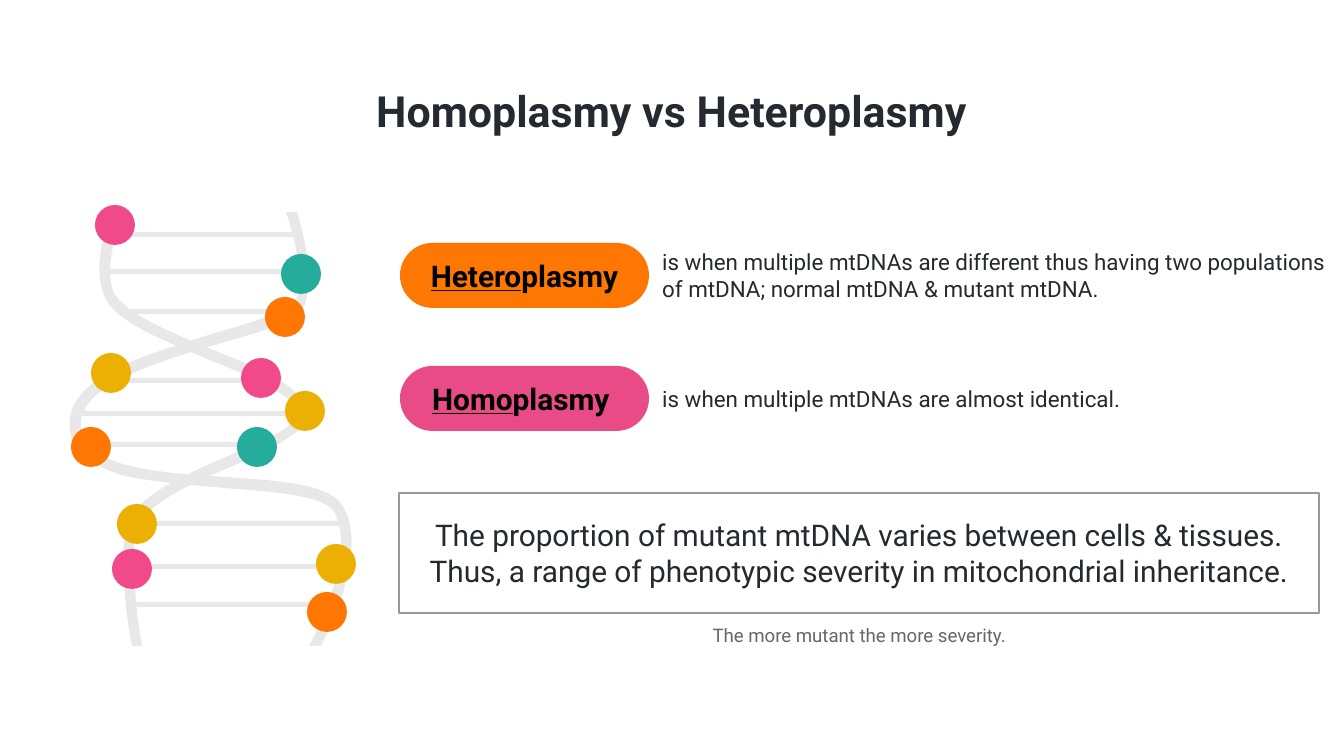
from dataclasses import dataclass

from pptx import Presentation
from pptx import util as u
from pptx.dml.color import RGBColor
from pptx.enum import shapes, text

EMU_PER_PX = 9144000 / 1344


@dataclass(frozen=True)
class Theme:
    font: str = "Roboto"
    ink: str = "252A30"
    black: str = "000000"
    muted: str = "666666"
    frame: str = "999999"
    strand: str = "E8E8E8"
    pink: str = "F04A8A"
    rose: str = "E94B86"
    teal: str = "25AC9B"
    orange: str = "FE7702"
    yellow: str = "ECB004"
    title_size: int = 23
    term_size: int = 16
    body_size: int = 12
    note_size: int = 10


THEME = Theme()

# Each strand outline: start, then one side and the other as cubic curves
STRANDS = [
    [(113, 212),
     [(103, 234, 95, 262, 102, 289), (108, 319, 156, 337, 207, 359),
      (247, 375, 289, 392, 296, 410), (302, 425, 265, 441, 228, 456),
      (180, 477, 125, 500, 124, 538), (122, 574, 125, 610, 132, 646)],
     (142, 646),
     [(136, 612, 133, 575, 134, 539), (136, 508, 187, 485, 233, 466),
      (253, 457, 273, 449, 286, 439), (293, 435, 313, 423, 305, 406),
      (297, 383, 255, 367, 211, 349), (167, 331, 117, 310, 112, 288),
      (106, 261, 116, 233, 124, 212)]],
    [(286, 212),
     [(290, 224, 305, 269, 297, 298), (293, 310, 251, 323, 215, 333),
      (181, 344, 144, 355, 117, 368), (82, 386, 67, 406, 70, 430),
      (73, 452, 91, 466, 125, 476), (153, 482, 190, 485, 224, 488),
      (274, 492, 325, 495, 335, 513), (355, 552, 320, 626, 309, 646)],
     (321, 646),
     [(335, 620, 366, 548, 344, 508), (332, 484, 282, 481, 226, 477),
      (160, 473, 86, 468, 81, 429), (75, 386, 155, 363, 218, 344),
      (265, 331, 302, 320, 306, 301), (314, 270, 302, 228, 297, 212)]],
]

# Rungs: left, right, top
RUNGS = [(132, 331, 602), (129, 345, 564), (132, 343, 521),
         (82, 270, 442), (77, 301, 411), (109, 267, 378),
         (128, 285, 309), (109, 301, 269), (112, 296, 232)]
RUNG_HEIGHT = 5

# Beads: centre x, centre y, colour
BEADS = [(115, 225, THEME.pink), (301, 274, THEME.teal),
         (285, 317, THEME.orange), (261, 378, THEME.pink),
         (91, 447, THEME.orange), (305, 411, THEME.yellow),
         (132, 569, THEME.pink), (327, 612, THEME.orange),
         (257, 447, THEME.teal), (336, 564, THEME.yellow),
         (111, 373, THEME.yellow), (137, 524, THEME.yellow)]
BEAD_SIZE = 40

# Terms: top, pill colour, underlined prefix, rest, definition
TERMS = [
    (243, THEME.orange, "Hetero", "plasmy",
     "is when multiple mtDNAs are different thus having two populations "
     "of mtDNA; normal mtDNA & mutant mtDNA."),
    (366, THEME.rose, "Homo", "plasmy ",
     "is when multiple mtDNAs are almost identical."),
]


def px(value):
    return u.Emu(round(value * EMU_PER_PX))


def paint(shape, fill=None, line=None):
    shape.shadow.inherit = False
    if fill:
        shape.fill.solid()
        shape.fill.fore_color.rgb = RGBColor.from_string(fill)
    else:
        shape.fill.background()
    if line:
        shape.line.color.rgb = RGBColor.from_string(line)
        shape.line.width = u.Pt(1.5)
    else:
        shape.line.fill.background()


def add_preset(slide, kind, box, adjustments=(), **colours):
    shape = slide.shapes.add_shape(kind, *map(px, box))
    for index, value in enumerate(adjustments):
        shape.adjustments[index] = value
    paint(shape, **colours)
    return shape


def write(shape, paragraphs, size, colour=THEME.ink, bold=False, centred=True,
          anchor=text.MSO_ANCHOR.MIDDLE, spacing=None):
    """Each paragraph is a list of (words, underlined) runs."""
    frame = shape.text_frame
    frame_format = {"word_wrap": True, "vertical_anchor": anchor}
    frame_format |= {f"margin_{side}": u.Inches(0.1)
                     for side in ("left", "top", "right", "bottom")}
    for name, value in frame_format.items():
        setattr(frame, name, value)
    run_format = {"name": THEME.font, "size": u.Pt(size), "bold": bold}
    for index, runs in enumerate(paragraphs):
        paragraph = frame.add_paragraph() if index else frame.paragraphs[0]
        paragraph.alignment = text.PP_ALIGN.CENTER if centred else text.PP_ALIGN.LEFT
        if spacing:
            paragraph.line_spacing = spacing
        for words, underlined in runs:
            run = paragraph.add_run()
            run.text = words
            for name, value in (run_format | {"underline": underlined}).items():
                setattr(run.font, name, value)
            run.font.color.rgb = RGBColor.from_string(colour)


def add_text(slide, box, paragraphs, size, **style):
    label = slide.shapes.add_textbox(*map(px, box))
    write(label, paragraphs, size, **style)
    return label


def trace(start, curves, steps=16):
    """Points along a chain of cubic curves, after the start point."""
    points = []
    for x1, y1, x2, y2, x3, y3 in curves:
        for step in range(1, steps + 1):
            t = step / steps
            s = 1 - t
            points.append(tuple(
                s**3 * a + 3 * s * s * t * b + 3 * s * t * t * c + t**3 * d
                for a, b, c, d in zip(start, (x1, y1), (x2, y2), (x3, y3))))
        start = (x3, y3)
    return points


def add_strand(slide, start, outward, turn, back):
    points = trace(start, outward) + [turn] + trace(turn, back)
    builder = slide.shapes.build_freeform(*map(px, start), scale=1.0)
    builder.add_line_segments([(px(x), px(y)) for x, y in points], close=True)
    paint(builder.convert_to_shape(), fill=THEME.strand)


def add_helix(slide):
    for strand in STRANDS:
        add_strand(slide, *strand)
    for left, right, top in RUNGS:
        add_preset(slide, shapes.MSO_SHAPE.RECTANGLE,
                   (left, top, right - left, RUNG_HEIGHT), fill=THEME.strand)
    for x, y, colour in BEADS:
        add_preset(slide, shapes.MSO_SHAPE.OVAL,
                   (x - BEAD_SIZE / 2, y - BEAD_SIZE / 2, BEAD_SIZE, BEAD_SIZE),
                   fill=colour)


def add_term(slide, top, colour, prefix, rest, definition):
    add_preset(slide, shapes.MSO_SHAPE.ROUND_2_SAME_RECTANGLE,
               (400, top, 249, 65), (0.5, 0.5), fill=colour)
    add_text(slide, (407, top + 8, 235, 49), [[(prefix, True), (rest, False)]],
             THEME.term_size, colour=THEME.black, bold=True)
    add_text(slide, (649, top, 695, 65), [[(definition, False)]],
             THEME.body_size, centred=False)


def add_takeaway(slide):
    frame = add_preset(slide, shapes.MSO_SHAPE.ROUNDED_RECTANGLE,
                       (399, 493, 920, 120), (0,), line=THEME.frame)
    write(frame,
          [[("The proportion of mutant mtDNA varies between cells & tissues.", False)],
           [("Thus, a range of phenotypic severity in mitochondrial inheritance.", False)]],
          THEME.term_size)
    add_text(slide, (399, 613, 920, 50),
             [[("The more mutant the more severity.", False)]], THEME.note_size,
             colour=THEME.muted, anchor=text.MSO_ANCHOR.TOP)


def main():
    deck = Presentation()
    deck.slide_width, deck.slide_height = px(1344), px(756)
    slide = deck.slides.add_slide(deck.slide_layouts[6])

    # Title
    add_text(slide, (67, 81, 1210, 50), [[("Homoplasmy vs Heteroplasmy", False)]],
             THEME.title_size, bold=True, anchor=text.MSO_ANCHOR.TOP, spacing=0.8)
    # DNA drawing
    add_helix(slide)
    # Terms with their definitions
    for term in TERMS:
        add_term(slide, *term)
    # Framed conclusion and note
    add_takeaway(slide)

    deck.save("out.pptx")


if __name__ == "__main__":
    main()
